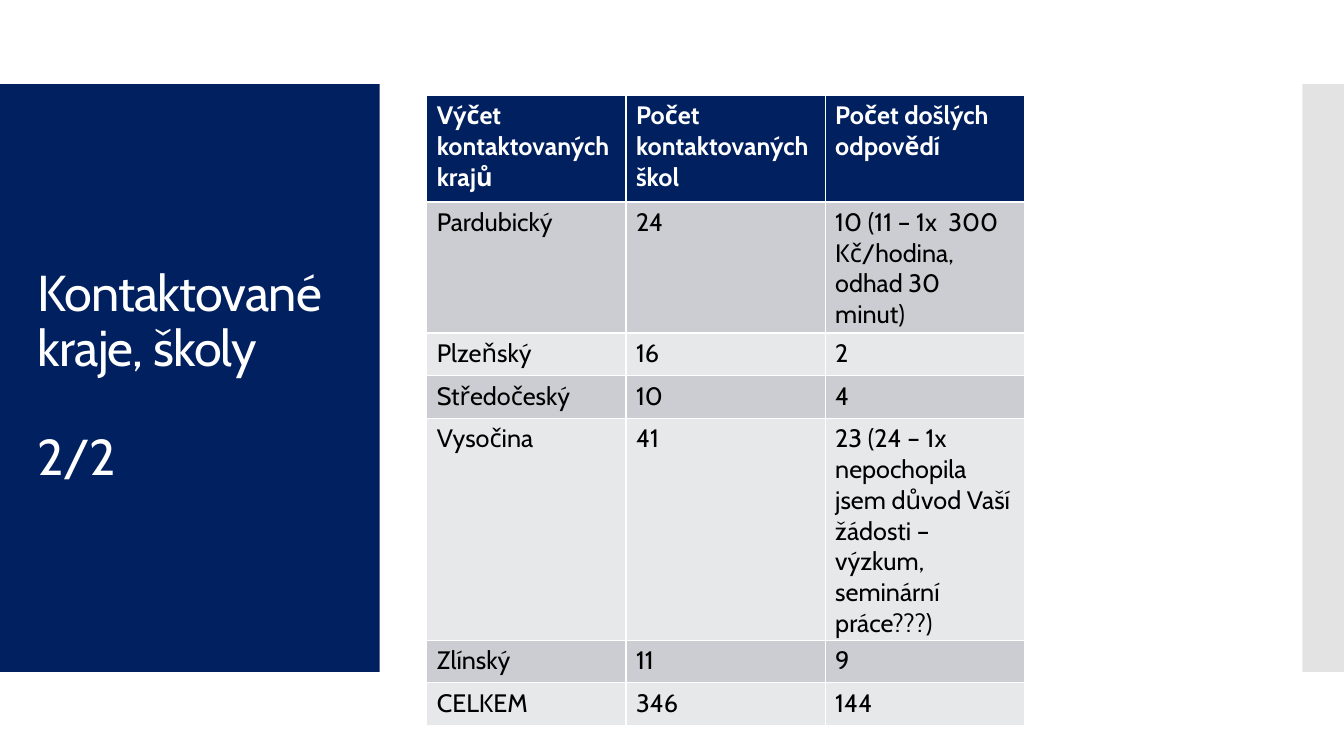
import pptx
import pptx.dml.color
import pptx.enum.shapes
import pptx.enum.text
import pptx.oxml.ns
import pptx.util
from lxml import etree

Pt = pptx.util.Pt
NAVY, WHITE, BLACK = "002060", "FFFFFF", "000000"
BANDS = ["E7E8EA", "CCCDD2"]


def color(code):
    return pptx.dml.color.RGBColor.from_string(code)


def panel(left, width, code):
    """Draw a full-height side panel without outline."""
    shape = slide.shapes.add_shape(
        pptx.enum.shapes.MSO_SHAPE.RECTANGLE, Pt(left), Pt(60), Pt(width), Pt(420))
    shape.shadow.inherit = False
    shape.fill.solid()
    shape.fill.fore_color.rgb = color(code)
    shape.line.fill.background()
    return shape


deck = pptx.Presentation()
deck.slide_width, deck.slide_height = Pt(960), Pt(540)
slide = deck.slides.add_slide(deck.slide_layouts[6])

# Side panels, the right one half transparent
panel(0, 271.2, NAVY)
strip = panel(930.2, 29.8, "C8C8C8")
tint = strip.fill._xPr.find(".//" + pptx.oxml.ns.qn("a:srgbClr"))
etree.SubElement(tint, pptx.oxml.ns.qn("a:alpha"), val="50000")

# Title
title = slide.shapes.add_textbox(Pt(20), Pt(88.5), Pt(232), Pt(362))
frame = title.text_frame
frame.word_wrap = True
frame.vertical_anchor = pptx.enum.text.MSO_ANCHOR.MIDDLE
frame.text = "Kontaktované kraje, školy\n2/2"
for para in frame.paragraphs:
    para.line_spacing = 0.9
    para.font.name = "Cabin"
    para.font.size = Pt(36)
    para.font.color.rgb = color(WHITE)
    for run in para.runs:
        run.font._element.set("spc", "-60")
frame.paragraphs[1].space_before = Pt(39)

# Table of regions
rows = [
    (76.3, "Výčet kontaktovaných krajů", "Počet kontaktovaných škol",
     "Počet došlých odpovědí"),
    (76.3, "Pardubický", "24", "10 (11 – 1x  300 Kč/hodina, odhad 30 minut)"),
    (30.5, "Plzeňský", "16", "2"),
    (30.5, "Středočeský", "10", "4"),
    (122, "Vysočina", "41", "23 (24 – 1x nepochopila jsem důvod Vaší žádosti"
     " – výzkum, seminární práce???)"),
    (30.5, "Zlínský", "11", "9"),
    (30.5, "CELKEM", "346", "144"),
]
table = slide.shapes.add_table(
    len(rows), 3, Pt(304.8), Pt(68), Pt(427), Pt(433)).table
for col in table.columns:
    col.width = Pt(142.3)
for i, (height, *texts) in enumerate(rows):
    table.rows[i].height = Pt(height)
    head = i == 0
    for cell, text in zip(table.rows[i].cells, texts):
        cell.text = text
        cell.fill.solid()
        cell.fill.fore_color.rgb = color(NAVY if head else BANDS[i % 2])
        font = cell.text_frame.paragraphs[0].font
        font.name = "Cabin"
        font.size = Pt(18)
        font.bold = head
        font.color.rgb = color(WHITE if head else BLACK)

deck.save("out.pptx")
